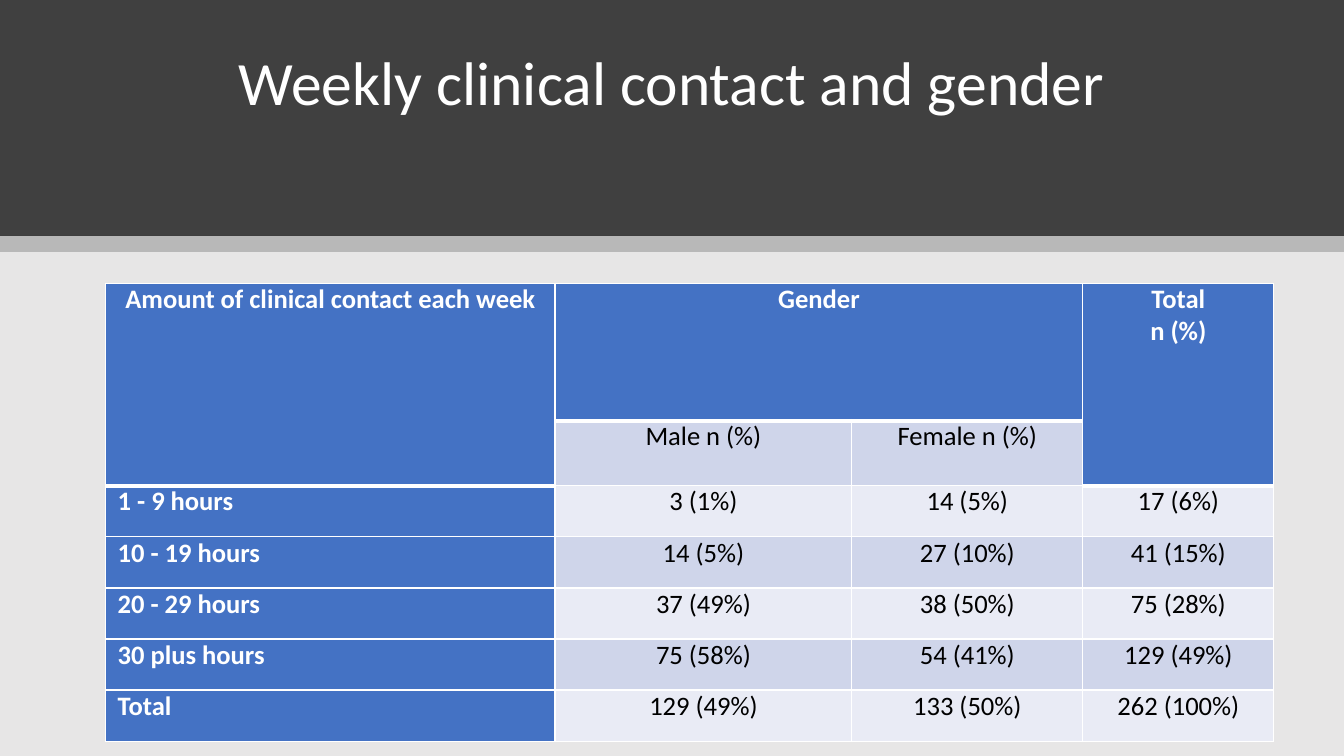
from lxml import etree
from pptx import Presentation
from pptx.dml.color import RGBColor
from pptx.enum import shapes, text
from pptx.oxml.ns import qn
from pptx.util import Pt

WHITE = RGBColor(0xFF, 0xFF, 0xFF)
BLACK = RGBColor(0x00, 0x00, 0x00)
PAPER = RGBColor(0xE7, 0xE6, 0xE6)
CHARCOAL = RGBColor(0x40, 0x40, 0x40)
BLUE = RGBColor(0x44, 0x72, 0xC4)
BAND_DARK = RGBColor(0xCF, 0xD5, 0xEA)
BAND_LIGHT = RGBColor(0xE9, 0xEB, 0xF5)
FONT = "Calibri"

SLIDE_WIDTH, SLIDE_HEIGHT = 960, 540
HEADER_HEIGHT, STRIP_HEIGHT = 168.5, 11.5

CONTACT_ROWS = [
    ["Amount of clinical contact each week", "Gender", "", "Total\nn (%)"],
    ["", "Male n (%)", "Female n (%)", ""],
    ["1 - 9 hours", "3 (1%)", "14 (5%)", "17 (6%)"],
    ["10 - 19 hours", "14 (5%)", "27 (10%)", "41 (15%)"],
    ["20 - 29 hours", "37 (49%)", "38 (50%)", "75 (28%)"],
    ["30 plus hours", "75 (58%)", "54 (41%)", "129 (49%)"],
    ["Total", "129 (49%)", "133 (50%)", "262 (100%)"],
]
COLUMN_WIDTHS = [321, 212, 165, 136.5]
ROW_HEIGHTS = [98, 46.5] + [36.5] * 5
LAST_HEADER_ROW = [1, 0, 0, 1]  # per column


def add_band(slide, left, top, width, height, color, opacity=100):
    band = slide.shapes.add_shape(shapes.MSO_SHAPE.RECTANGLE, Pt(left), Pt(top),
                                  Pt(width), Pt(height))
    band.shadow.inherit = False
    band.line.fill.background()
    band.fill.solid()
    band.fill.fore_color.rgb = color
    if opacity < 100:
        tint = band.element.spPr.find(qn("a:solidFill"))[0]
        etree.SubElement(tint, qn("a:alpha"), val=str(opacity * 1000))


def style_runs(paragraph, size, color, bold=False):
    for run in paragraph.runs:
        run.font.name = FONT
        run.font.size = Pt(size)
        run.font.bold = bold
        run.font.color.rgb = color


def place_title(slide, wording, left, top, width, height):
    """Fill the title placeholder and bring it in front of the bands."""
    title = slide.shapes.title
    title.element.getparent().append(title.element)
    title.left, title.top, title.width, title.height = map(Pt, (left, top, width, height))
    frame = title.text_frame
    frame.text = wording
    frame.word_wrap = True
    frame.auto_size = text.MSO_AUTO_SIZE.NONE
    frame.vertical_anchor = text.MSO_ANCHOR.TOP
    heading = frame.paragraphs[0]
    heading.alignment = text.PP_ALIGN.CENTER
    heading.line_spacing = 0.9
    style_runs(heading, 44, WHITE)


def add_header(slide, wording, left, top, width, height):
    add_band(slide, left, top, width, height, CHARCOAL)
    place_title(slide, wording, left + 75.5, top + 34, 809, 107)
    add_band(slide, left, top + height, width, STRIP_HEIGHT, BLACK, opacity=20)


def set_borders(cell, weights):
    properties = cell._tc.get_or_add_tcPr()
    for edge in ("lnL", "lnR", "lnT", "lnB"):
        line = etree.SubElement(properties, qn(f"a:{edge}"),
                                w=str(Pt(weights.get(edge, 1))))
        fill = etree.SubElement(line, qn("a:solidFill"))
        etree.SubElement(fill, qn("a:srgbClr"), val=str(WHITE))


def format_cell(cell, row, column):
    last_header = LAST_HEADER_ROW[column]
    is_heading = column == 0 or row <= last_header
    set_borders(cell, {"lnT": 3 if row == last_header + 1 else 1,
                       "lnB": 3 if row <= last_header else 1})
    cell.fill.solid()
    band_color = BAND_DARK if row % 2 else BAND_LIGHT
    cell.fill.fore_color.rgb = BLUE if is_heading else band_color
    cell.margin_left = cell.margin_right = Pt(8.64)
    cell.margin_top = cell.margin_bottom = 0
    is_row_label = column == 0 and row > last_header
    for paragraph in cell.text_frame.paragraphs:
        paragraph.alignment = text.PP_ALIGN.LEFT if is_row_label else text.PP_ALIGN.CENTER
        style_runs(paragraph, 19, WHITE if is_heading else BLACK, is_heading)


def add_contact_table(slide, left, top):
    contact = slide.shapes.add_table(len(ROW_HEIGHTS), len(COLUMN_WIDTHS), Pt(left), Pt(top),
                                     Pt(sum(COLUMN_WIDTHS)), Pt(sum(ROW_HEIGHTS))).table
    contact.first_row = contact.horz_banding = False
    for column, width in zip(contact.columns, COLUMN_WIDTHS):
        column.width = Pt(width)
    for row, height in zip(contact.rows, ROW_HEIGHTS):
        row.height = Pt(height)
    for row, entries in enumerate(CONTACT_ROWS):
        for column, entry in enumerate(entries):
            cell = contact.cell(row, column)
            cell.text_frame.text = entry
            format_cell(cell, row, column)
    for first, last in (((0, 0), (1, 0)), ((0, 1), (0, 2)), ((0, 3), (1, 3))):
        contact.cell(*first).merge(contact.cell(*last))


def main():
    deck = Presentation()
    deck.slide_width, deck.slide_height = Pt(SLIDE_WIDTH), Pt(SLIDE_HEIGHT)
    slide = deck.slides.add_slide(deck.slide_layouts[5])
    add_band(slide, 0, 0, SLIDE_WIDTH, SLIDE_HEIGHT, PAPER)
    add_header(slide, "Weekly clinical contact and gender", 0, 0, SLIDE_WIDTH, HEADER_HEIGHT)
    add_contact_table(slide, 75.5, 202.5)
    deck.save("out.pptx")


if __name__ == "__main__":
    main()
